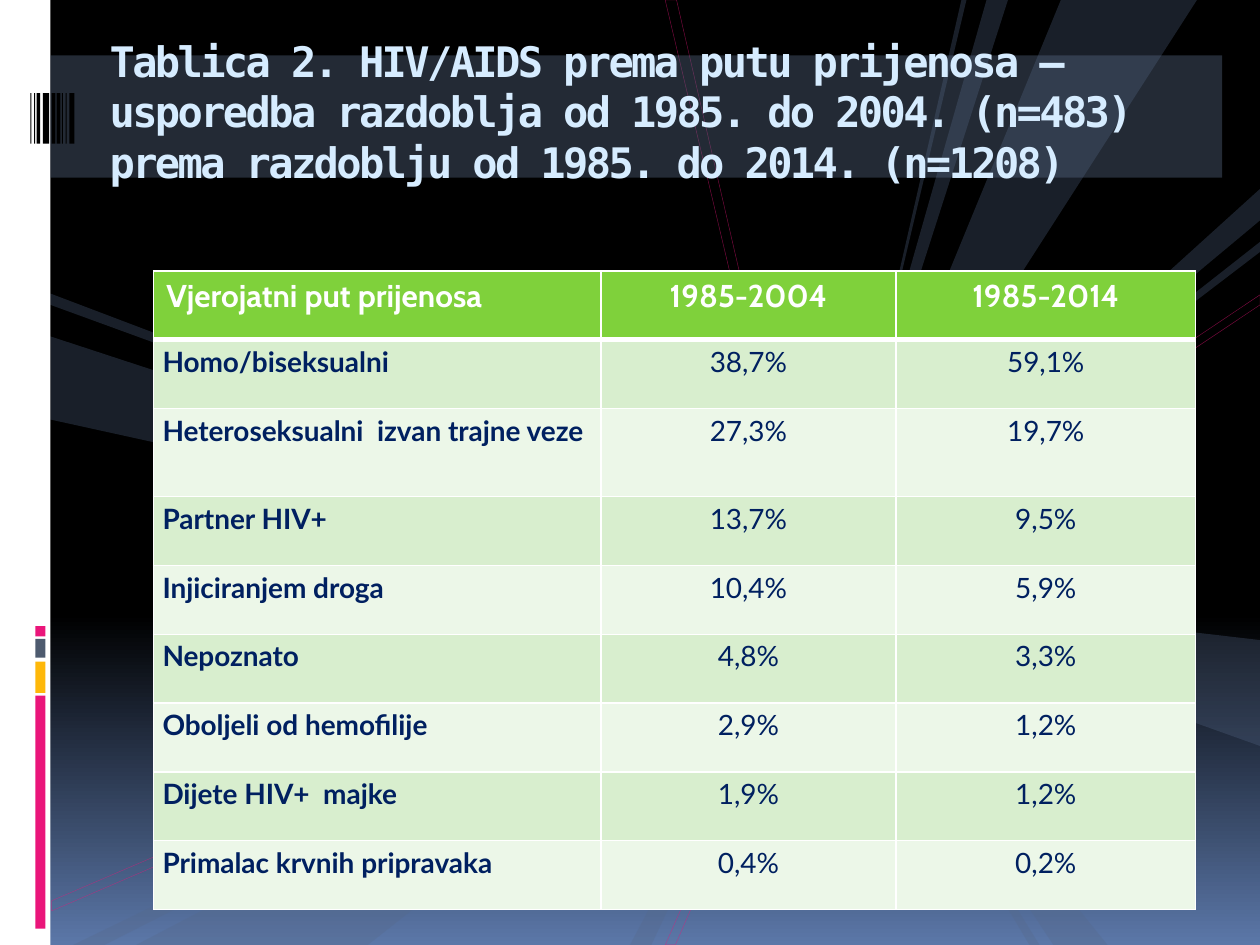
"""Build the slide comparing HIV/AIDS transmission routes in two periods."""
from lxml import etree
from pptx import Presentation
from pptx.dml.color import RGBColor
from pptx.enum.shapes import MSO_SHAPE as SHAPE
from pptx.enum.text import MSO_ANCHOR as ANCHOR, MSO_AUTO_SIZE as AUTO, PP_ALIGN as ALIGN
from pptx.oxml import parse_xml
from pptx.oxml.ns import nsdecls, qn
from pptx.util import Inches, Pt

BLACK = RGBColor(0x00, 0x00, 0x00)
WHITE = RGBColor(0xFF, 0xFF, 0xFF)
BLUE = RGBColor(0x5B, 0x77, 0xA8)
RAY = RGBColor(0x56, 0x69, 0x89)
BAND = RGBColor(0x58, 0x6A, 0x86)
PINK = RGBColor(0xEA, 0x15, 0x7A)
YELLOW = RGBColor(0xFE, 0xB8, 0x0A)
SLATE = RGBColor(0x4E, 0x5B, 0x6F)
PALE = RGBColor(0xD6, 0xEC, 0xFF)
GREEN = RGBColor(0x7F, 0xD1, 0x3B)
STRIPES = RGBColor(0xEC, 0xF7, 0xE8), RGBColor(0xD8, 0xEE, 0xCE)
NAVY = RGBColor(0x00, 0x20, 0x60)
HUB = (6.5, 4.67)

prs = Presentation()
prs.slide_width, prs.slide_height = Inches(10), Inches(7.5)
s = prs.slides.add_slide(prs.slide_layouts[5])
bg = s.background.fill
bg.gradient()
bg.gradient_angle = 270
for stop, position, color in zip(bg.gradient_stops, (0.65, 1), (BLACK, BLUE)):
    stop.position, stop.color.rgb = position, color


def paint(fill, color, alpha=100):
    fill.solid()
    fill.fore_color.rgb = color
    if alpha < 100:
        srgb = fill._xPr.find(".//" + qn("a:srgbClr"))
        etree.SubElement(srgb, qn("a:alpha"), val=str(alpha * 1000))


def add_outline(points):
    points = [(round(x * 100), round(y * 100)) for x, y in points]
    builder = s.shapes.build_freeform(*points[0], scale=Inches(1) / 100)
    builder.add_line_segments(points[1:], close=True)
    sp = builder.convert_to_shape()
    sp.shadow.inherit = False
    return sp


threads = [
    [(5.28, 7.5), (6.52, 4.67), (10, 2.34), (10, 2.42), (6.57, 4.71), (5.36, 7.5)],
    [(0.41, 7.15), (0.41, 7.23), (6.44, 4.63), (5.37, 0), (5.28, 0), (6.37, 4.59)],
]
for points in threads:
    sp = add_outline(points)
    sp.fill.background()
    sp.line.width = Pt(0.25)
    paint(sp.line.fill, PINK, 53)

rays = [
    ((7.63, 0), (7.67, 0), (6.59, 4.55)),
    ((8.42, 0), (9.5, 0), HUB),
    ((10, 5.08), (10, 5.92), HUB),
    ((7.83, 0), (8, 0), HUB),
    ((8.36, 7.5), (8.79, 7.5), HUB),
    ((8.17, 7.5), (8.25, 7.5), HUB),
    ((10, 1.5), (10, 1.75), HUB),
    ((10, 1.92), (10, 2), HUB),
    ((1.08, 7.5), (2.92, 7.5), HUB),
    ((0.58, 7.5), (0.83, 7.5), (6.42, 4.67)),
    ((0.4, 2.67), (0.4, 3.33), HUB),
    ((0.4, 2.33), (0.4, 2.42), (6.57, 4.67)),
    ((5, 7.5), (5.17, 7.5), HUB),
]
for points in rays:
    sp = add_outline(points)
    sp.line.fill.background()
    paint(sp.fill, RAY, 30)

blocks = [
    (0, 0, 0.4, 7.5, WHITE, 100),
    (0.4, 0.44, 9.3, 0.97, BAND, 40),
    (0.28, 5.52, 0.08, 1.85, PINK, 100),
    (0.28, 5.25, 0.08, 0.25, YELLOW, 100),
    (0.28, 5.07, 0.08, 0.15, SLATE, 100),
    (0.28, 4.97, 0.08, 0.08, PINK, 100),
]
barcode = [(0.24, 0.01), (0.27, 0.01), (0.29, 0.03), (0.34, 0.05), (0.41, 0.03),
           (0.45, 0.03), (0.49, 0.01), (0.52, 0.01), (0.55, 0.04)]
blocks += [(x, 0.74, w, 0.4, BLACK, 100) for x, w in barcode]
for *box, color, alpha in blocks:
    sp = s.shapes.add_shape(SHAPE.RECTANGLE, *map(Inches, box))
    sp.shadow.inherit = False
    sp.line.fill.background()
    paint(sp.fill, color, alpha)

title = s.shapes.title
s.shapes._spTree.append(title._element)
title.left, title.top, title.width, title.height = map(Inches, (0.77, 0.21, 8.92, 1.2))
tf = title.text_frame
tf.text = ("Tablica 2. HIV/AIDS prema putu prijenosa – usporedba razdoblja od 1985. do 2004. "
           "(n=483) prema razdoblju od 1985. do 2014. (n=1208)")
tf.word_wrap, tf.auto_size, tf.vertical_anchor = True, AUTO.NONE, ANCHOR.TOP
tf.margin_left = tf.margin_right = Inches(0.1)
tf.margin_top, tf.margin_bottom = Inches(0.07), Inches(0.05)
p = tf.paragraphs[0]
p.alignment = ALIGN.LEFT
r = p.runs[0]
r.font.name, r.font.size, r.font.bold = "DejaVu Sans Mono", Pt(24), True
r.font.color.rgb = PALE
r._r.get_or_add_rPr().set("spc", "-150")

rows = [
    ("Vjerojatni put prijenosa", "1985-2004", "1985-2014"),
    ("Homo/biseksualni", "38,7%", "59,1%"),
    ("Heteroseksualni  izvan trajne veze", "27,3%", "19,7%"),
    ("Partner HIV+", "13,7%", "9,5%"),
    ("Injiciranjem droga", "10,4%", "5,9%"),
    ("Nepoznato", "4,8%", "3,3%"),
    ("Oboljeli od hemofilije", "2,9%", "1,2%"),
    ("Dijete HIV+  majke", "1,9%", "1,2%"),
    ("Primalac krvnih pripravaka", "0,4%", "0,2%"),
]
box = map(Inches, (1.22, 2.15, 8.27, 5.07))
table = s.shapes.add_table(len(rows), 3, *box).table
for column, width in zip(table.columns, (3.55, 2.34, 2.38)):
    column.width = Inches(width)
for i, row in enumerate(rows):
    table.rows[i].height = Inches(0.7 if i == 2 else (5.07 - 0.7) / 8)
    header = i == 0
    for j, text in enumerate(row):
        cell = table.cell(i, j)
        for side in "LRTB":
            thick = (i, side) in ((0, "B"), (1, "T"))
            cell._tc.get_or_add_tcPr().append(parse_xml(
                f'<a:ln{side} {nsdecls("a")} w="{Pt(3 if thick else 1)}"><a:solidFill>'
                f'<a:srgbClr val="{WHITE}"/></a:solidFill></a:ln{side}>'))
        paint(cell.fill, GREEN if header else STRIPES[i % 2])
        cell.text_frame.text = text
        p = cell.text_frame.paragraphs[0]
        p.alignment = ALIGN.CENTER if j else ALIGN.LEFT if header else ALIGN.JUSTIFY
        if not header:
            cell.margin_left = cell.margin_right = Inches(0.07)
            cell.margin_top = cell.margin_bottom = 0
            p.line_spacing, p.space_after = 1.15, Pt(10)
        font = p.runs[0].font
        font.name, font.size = ("Cabin", Pt(18)) if header else ("Lato", Pt(16))
        font.bold = header or j == 0
        font.color.rgb = WHITE if header else NAVY

prs.save("out.pptx")
